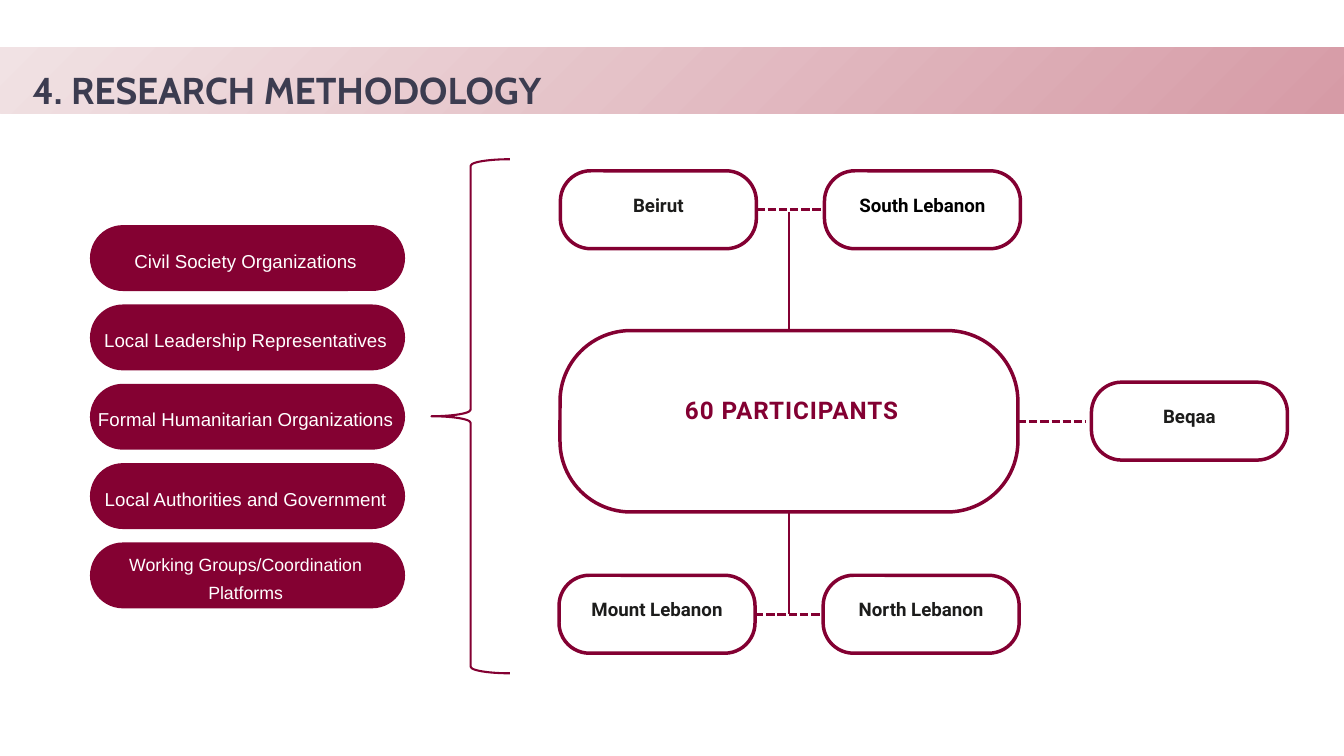
from dataclasses import dataclass

from pptx import Presentation
from pptx.dml.color import RGBColor
from pptx.enum.dml import MSO_LINE
from pptx.enum.shapes import MSO_CONNECTOR, MSO_SHAPE
from pptx.enum.text import MSO_ANCHOR, MSO_AUTO_SIZE, PP_ALIGN
from pptx.oxml.xmlchemy import OxmlElement
from pptx.util import Pt

ROUNDED, RECT, BRACE = MSO_SHAPE.ROUNDED_RECTANGLE, MSO_SHAPE.RECTANGLE, MSO_SHAPE.LEFT_BRACE
STRAIGHT, DASH = MSO_CONNECTOR.STRAIGHT, MSO_LINE.SQUARE_DOT
LEFT, CENTER = PP_ALIGN.LEFT, PP_ALIGN.CENTER
TOP, MIDDLE = MSO_ANCHOR.TOP, MSO_ANCHOR.MIDDLE
SITE_TOP, SITE_LEFT, SITE_BOTTOM, SITE_RIGHT = range(4)


@dataclass(frozen=True)
class Theme:
    accent: str = "830032"
    pill: str = "840132"
    title: str = "3C3C50"
    ink: str = "1C1C1B"
    black: str = "000000"
    white: str = "FFFFFF"
    band_light: str = "F1E2E4"
    band_dark: str = "D69BA6"
    title_size: float = 40
    hub_size: float = 26
    label_size: float = 20
    small_size: float = 19
    outline: float = 3.75
    link: float = 3
    brace: float = 2.25


T = Theme()


@dataclass(frozen=True)
class Style:
    font: str
    size: float
    color: str
    bold: bool = False
    leading: float = 30
    align: PP_ALIGN = CENTER


@dataclass(frozen=True)
class Region:
    name: str
    x: float
    y: float
    color: str = T.ink


@dataclass(frozen=True)
class Group:
    name: str
    size: float = T.label_size
    wrap: bool = False


REGION_W, REGION_H = 210, 83.5
REGIONS = [
    Region("Beirut", 600.4, 183),
    Region("South Lebanon", 883.4, 183, T.black),
    Region("Mount Lebanon", 599, 616.4),
    Region("North Lebanon", 882, 616.4),
    Region("Beqaa", 1169.4, 409.5),
]

PILL_X, PILL_Y, PILL_W, PILL_H, PILL_STEP = 96.4, 241.2, 337.6, 70.6, 85
GROUPS = [
    Group("Civil Society Organizations"),
    Group("Local Leadership Representatives"),
    Group("Formal Humanitarian Organizations"),
    Group("Local Authorities and Government"),
    Group("Working Groups/Coordination Platforms", T.small_size, wrap=True),
]


def rgb(value: str) -> RGBColor:
    return RGBColor.from_string(value)


def write(shape, text: str, style: Style, insets=(0, 0, 0, 0), anchor=MIDDLE, wrap=True):
    """Put one styled paragraph in a shape; insets are left, top, right, bottom."""
    tf = shape.text_frame
    tf.auto_size = MSO_AUTO_SIZE.NONE
    tf.word_wrap = wrap
    tf.vertical_anchor = anchor
    tf.margin_left, tf.margin_top, tf.margin_right, tf.margin_bottom = map(Pt, insets)
    p = tf.paragraphs[0]
    r = p.add_run()
    r.text = text
    p.alignment = style.align
    p.line_spacing = Pt(style.leading)
    p.font.name = style.font
    p.font.size = Pt(style.size)
    p.font.bold = style.bold
    p.font.color.rgb = rgb(style.color)
    return r


def add_box(s, kind, x: float, y: float, w: float, h: float,
            fill: str = "", line: str = "", weight: float = T.outline):
    shape = s.shapes.add_shape(kind, Pt(x), Pt(y), Pt(w), Pt(h))
    shape.shadow.inherit = False
    if fill:
        shape.fill.solid()
        shape.fill.fore_color.rgb = rgb(fill)
    else:
        shape.fill.background()
    if line:
        shape.line.color.rgb = rgb(line)
        shape.line.width = Pt(weight)
    else:
        shape.line.fill.background()
    return shape


def add_link(s, x1: float, y1: float, x2: float, y2: float, dashed: bool = False):
    link = s.shapes.add_connector(STRAIGHT, Pt(x1), Pt(y1), Pt(x2), Pt(y2))
    link.line.color.rgb = rgb(T.accent)
    link.line.width = Pt(T.link)
    if dashed:
        link.line.dash_style = DASH
    link.element.spPr.append(OxmlElement("a:effectLst"))
    return link


def add_region(s, region: Region):
    box = add_box(s, ROUNDED, region.x, region.y, REGION_W, REGION_H, line=T.accent)
    box.adjustments[0] = 0.39
    write(box, region.name, Style("Roboto", T.label_size, region.color, True), (0, 0, 0, 16.6))
    return box


def add_pill(s, group: Group, y: float) -> None:
    pill = add_box(s, ROUNDED, PILL_X, y, PILL_W, PILL_H, fill=T.pill)
    pill.adjustments[0] = 0.5
    write(pill, group.name, Style("Arial", group.size, T.white), (0, 0, 4, 0), wrap=group.wrap)


def main() -> None:
    prs = Presentation()
    prs.slide_width, prs.slide_height = Pt(1440), Pt(810)
    s = prs.slides.add_slide(prs.slide_layouts[5])

    # Title on a gradient band
    title = s.shapes.title
    title.left, title.top, title.width, title.height = Pt(34.6), Pt(52.6), Pt(1357), Pt(62)
    write(title, "4. RESEARCH METHODOLOGY",
          Style("Cabin", T.title_size, T.title, True, 67.2, LEFT), anchor=TOP)
    band = add_box(s, RECT, 0, 50.4, 1440, 71)
    band.fill.gradient()
    band.fill.gradient_angle = 315
    for stop, color in zip(band.fill.gradient_stops, (T.band_light, T.band_dark)):
        stop.color.rgb = rgb(color)
    title.element.addprevious(band.element)

    # Participant hub
    hub = add_box(s, ROUNDED, 600, 354.2, 490.6, 194.4, line=T.accent)
    hub.adjustments[0] = 0.39
    r = write(hub, "60 PARTICIPANTS",
              Style("Roboto", T.hub_size, T.accent, True, 33.5), (5.8, 0, 0, 26))
    r.font._element.set("spc", "100")

    # Regions and their links
    boxes = [add_region(s, region) for region in REGIONS]
    for left, right in (boxes[0:2], boxes[2:4]):
        link = add_link(s, 0, 0, 0, 0, dashed=True)
        link.begin_connect(left, SITE_RIGHT)
        link.end_connect(right, SITE_LEFT)
    for site, end_y in ((SITE_TOP, 226.8), (SITE_BOTTOM, 658)):
        add_link(s, 845.3, 354.2, 845.3, end_y).begin_connect(hub, site)
    add_link(s, 1090.6, 451.4, 1163.6, 451.4, dashed=True).begin_connect(hub, SITE_RIGHT)

    # Participant groups gathered by a brace
    add_box(s, BRACE, 462.2, 170.6, 84.2, 550.8, line=T.accent, weight=T.brace)
    for i, group in enumerate(GROUPS):
        add_pill(s, group, PILL_Y + i * PILL_STEP)

    prs.save("out.pptx")


if __name__ == "__main__":
    main()
